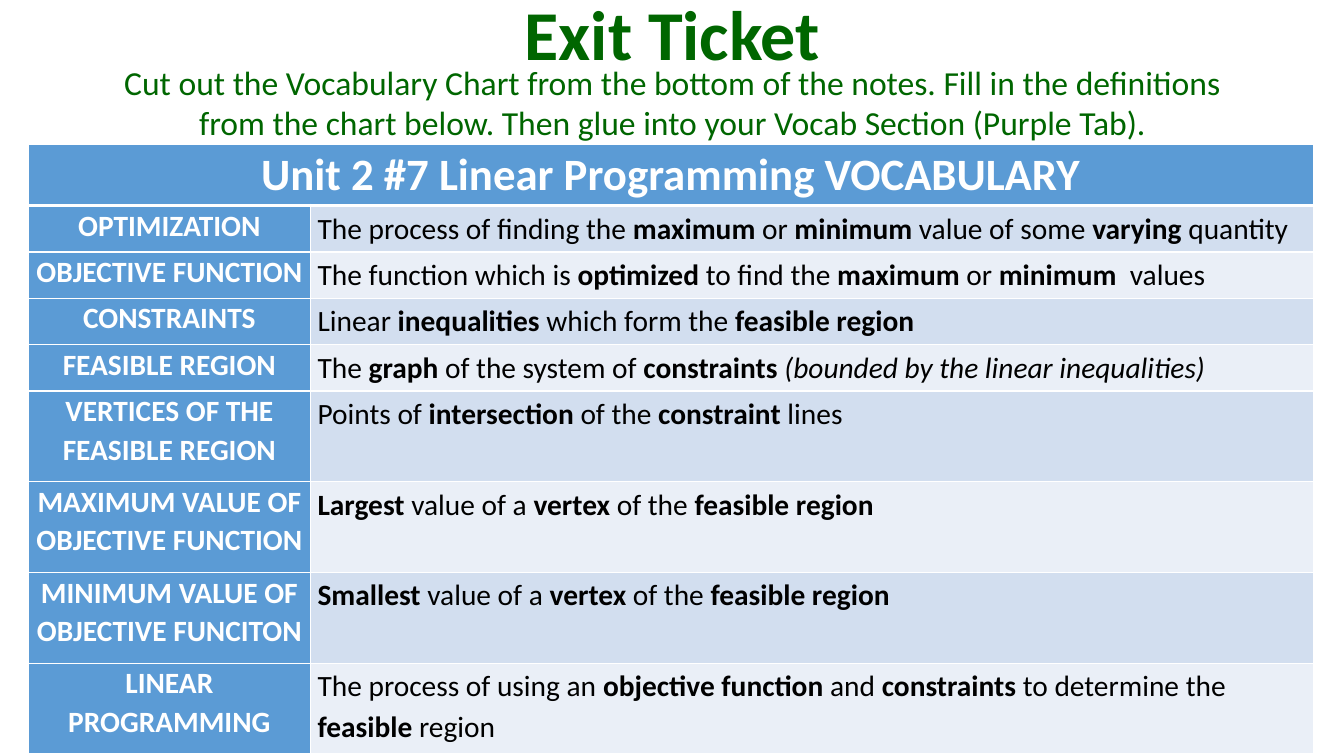
"""Build an exit ticket slide with a linear programming vocabulary table."""
from pptx import Presentation
from pptx.dml.color import RGBColor
from pptx.enum.text import MSO_ANCHOR, PP_ALIGN
from pptx.oxml import parse_xml
from pptx.oxml.ns import nsdecls
from pptx.util import Inches, Pt

COLORS = {
    "green": "006600",
    "blue": "5B9BD5",
    "dark_band": "D2DEEF",
    "light_band": "EAEFF7",
    "white": "FFFFFF",
    "black": "000000",
}
FONT = "Calibri"
HEADING = "Unit 2 #7 Linear Programming VOCABULARY"
INSTRUCTIONS = (
    "Cut out the Vocabulary Chart from the bottom of the notes. "
    "Fill in the definitions from the chart below. "
    "Then glue into your Vocab Section (Purple Tab)."
)
VOCABULARY = [
    ("OPTIMIZATION",
     "The process of finding the *maximum *or *minimum *value of some *varying *quantity"),
    ("OBJECTIVE FUNCTION",
     "The function which is *optimized *to find the *maximum* or *minimum  *values"),
    ("CONSTRAINTS",
     "Linear *inequalities *which form the *feasible region*"),
    ("FEASIBLE REGION",
     "The *graph *of the system of *constraints *_(bounded by the linear inequalities)_"),
    ("VERTICES OF THE FEASIBLE REGION",
     "Points of *intersection *of the *constraint *lines"),
    ("MAXIMUM VALUE OF OBJECTIVE FUNCTION",
     "*Largest *value of a *vertex *of the *feasible region*"),
    ("MINIMUM VALUE OF OBJECTIVE FUNCITON",
     "*Smallest *value of a *vertex* of the *feasible region*"),
    ("LINEAR PROGRAMMING",
     "The process of using an *objective function *and *constraints *"
     "to determine the *feasible *region"),
]
HEADER_HEIGHT, SINGLE_HEIGHT, DOUBLE_HEIGHT = 0.61, 0.46, 0.9
SINGLE_ROWS = 4


def write_marked(para, text, size, color):
    """Add runs to a paragraph, with *bold* and _italic_ marks."""
    for bold_index, chunk in enumerate(text.split("*")):
        for italic_index, words in enumerate(chunk.split("_")):
            if words:
                span = para.add_run()
                span.text = words
                span.font.name = FONT
                span.font.size = Pt(size)
                span.font.bold = bold_index % 2 == 1
                span.font.italic = italic_index % 2 == 1
                span.font.color.rgb = RGBColor.from_string(COLORS[color])


def fill_frame(shape, text, size, anchor, spacing):
    """Write centred green text into a title or a text box."""
    frame = shape.text_frame
    frame.word_wrap = True
    frame.vertical_anchor = anchor
    para = frame.paragraphs[0]
    para.alignment = PP_ALIGN.CENTER
    para.line_spacing = spacing
    write_marked(para, text, size, "green")


def add_borders(cell, bottom_width):
    """Draw white lines on all sides of a cell."""
    properties = cell._tc.get_or_add_tcPr()
    for side, width in zip("LRTB", (1, 1, 1, bottom_width)):
        properties.append(parse_xml(
            f'<a:ln{side} {nsdecls("a")} w="{Pt(width)}"><a:solidFill>'
            f'<a:srgbClr val="{COLORS["white"]}"/></a:solidFill></a:ln{side}>'))


def fill_cell(cell, text, size, color, fill, spacing, align, bottom_width=1):
    """Write and style one table cell."""
    add_borders(cell, bottom_width)
    cell.fill.solid()
    cell.fill.fore_color.rgb = RGBColor.from_string(COLORS[fill])
    cell.margin_left = cell.margin_right = Inches(0.07)
    cell.margin_top = cell.margin_bottom = 0
    para = cell.text_frame.paragraphs[0]
    para.alignment = align
    para.line_spacing = spacing
    write_marked(para, text, size, color)


def add_vocabulary(page):
    """Add the table of terms and definitions."""
    double_rows = len(VOCABULARY) - SINGLE_ROWS
    heights = ([HEADER_HEIGHT] + [SINGLE_HEIGHT] * SINGLE_ROWS
               + [DOUBLE_HEIGHT] * double_rows)
    table = page.shapes.add_table(
        len(heights), 2, Inches(0.28), Inches(1.43),
        Inches(12.75), Inches(sum(heights))).table
    for column, width in zip(table.columns, (2.8, 9.95)):
        column.width = Inches(width)
    for row, height in zip(table.rows, heights):
        row.height = Inches(height)

    heading = table.cell(0, 0)
    heading.merge(table.cell(0, 1))
    fill_cell(heading, f"*{HEADING}*", 32, "white", "blue", 1.07,
              PP_ALIGN.CENTER, bottom_width=3)
    for index, (term, definition) in enumerate(VOCABULARY, start=1):
        band = "dark_band" if index % 2 else "light_band"
        fill_cell(table.cell(index, 0), f"*{term}*", 21, "white", "blue",
                  1.07, PP_ALIGN.CENTER)
        fill_cell(table.cell(index, 1), definition, 21, "black", band,
                  1.15, PP_ALIGN.LEFT)


def main():
    """Build and save the deck."""
    deck = Presentation()
    deck.slide_width, deck.slide_height = Inches(13.33), Inches(7.5)
    page = deck.slides.add_slide(deck.slide_layouts[5])
    title = page.shapes.title
    title.left, title.top = Inches(0.92), Inches(0)
    title.width, title.height = Inches(11.5), Inches(0.81)
    fill_frame(title, "*Exit Ticket*", 50, MSO_ANCHOR.MIDDLE, 0.8)
    add_vocabulary(page)
    box = page.shapes.add_textbox(
        Inches(1.07), Inches(0.56), Inches(11.2), Inches(0.91))
    fill_frame(box, INSTRUCTIONS, 24, MSO_ANCHOR.TOP, 1.0)
    deck.save("out.pptx")


if __name__ == "__main__":
    main()
